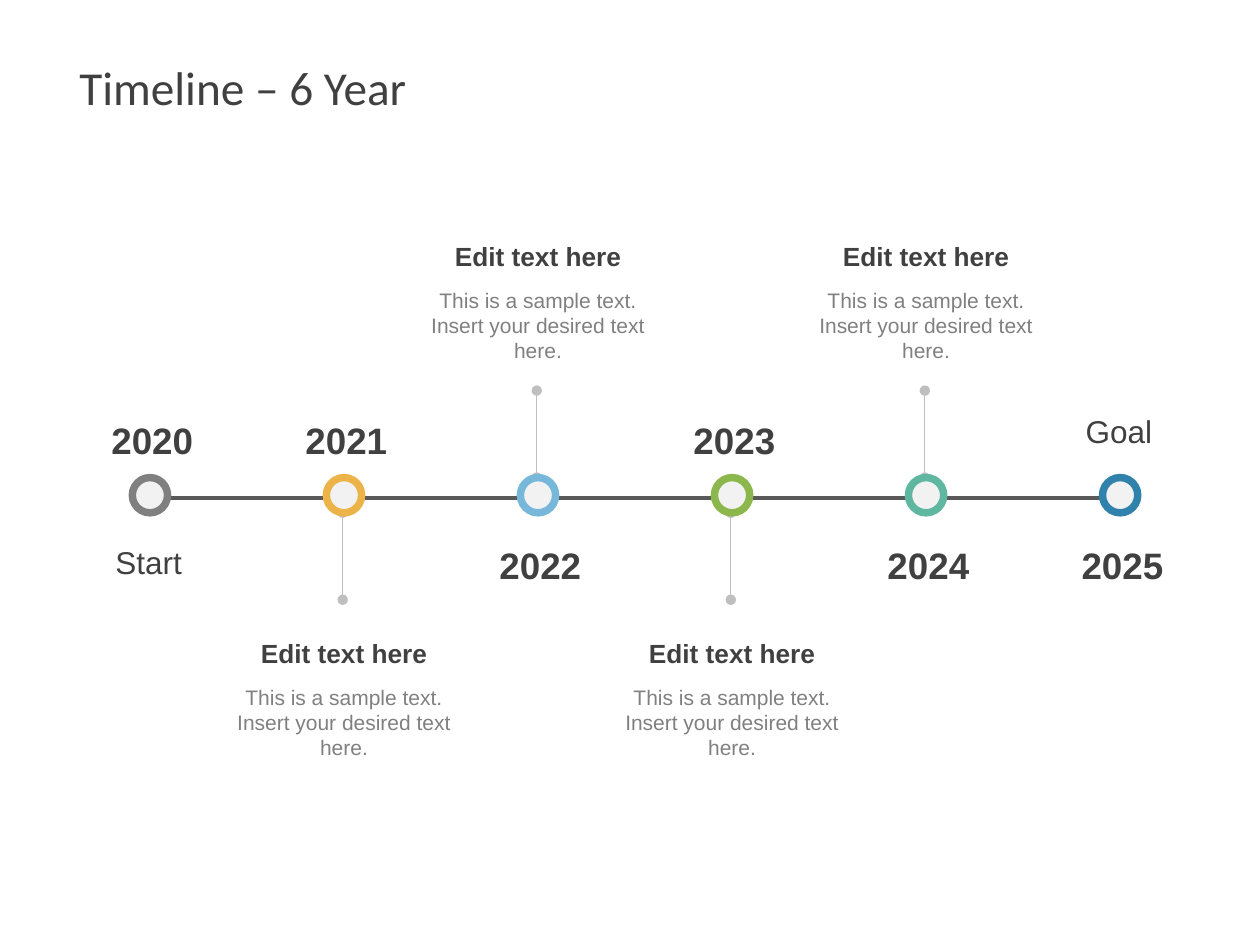
from dataclasses import dataclass

from lxml import etree
from pptx import Presentation
from pptx import util as u
from pptx.dml.color import RGBColor
from pptx.enum import shapes, text
from pptx.oxml.ns import qn

WIDTH, HEIGHT = 10, 7.5

INK = RGBColor(0x40, 0x40, 0x40)
GRAY = RGBColor(0x80, 0x80, 0x80)
AXIS_GRAY = RGBColor(0x59, 0x59, 0x59)
STEM_GRAY = RGBColor(0xBF, 0xBF, 0xBF)
NODE_FILL = RGBColor(0xF2, 0xF2, 0xF2)
AMBER = RGBColor(0xEC, 0xB4, 0x48)
SKY = RGBColor(0x77, 0xB7, 0xD9)
GREEN = RGBColor(0x8B, 0xB7, 0x4C)
TEAL = RGBColor(0x5F, 0xB7, 0xA2)
BLUE = RGBColor(0x30, 0x81, 0xAC)

# Horizontal grid: six equal columns, one per year
FIRST_X, COLUMN = 1.19, 1.54
NODE_Y, NODE_SIZE = 3.93, 0.28
AXIS_Y = 3.95
STEM_LENGTH = 0.69
YEAR_WIDTH, YEAR_SHIFT = 0.85, 0.02
CALLOUT_WIDTH, BODY_DROP = 2.08, 0.37

HEADING = "Edit text here"
BODY = "This is a sample text. Insert your desired text here."


@dataclass(frozen=True)
class Side:
    """Rows used on one side of the axis; direction is -1 above, 1 below."""
    direction: int
    year_top: float
    caption_top: float
    callout_top: float


ABOVE = Side(-1, year_top=3.27, caption_top=3.22, callout_top=1.86)
BELOW = Side(1, year_top=4.26, caption_top=4.26, callout_top=5.01)


@dataclass(frozen=True)
class Milestone:
    year: str
    color: RGBColor
    year_side: Side
    caption: str = ""

    @property
    def other_side(self) -> Side:
        return BELOW if self.year_side is ABOVE else ABOVE


MILESTONES = [
    Milestone("2020", GRAY, ABOVE, "Start"),
    Milestone("2021", AMBER, ABOVE),
    Milestone("2022", SKY, BELOW),
    Milestone("2023", GREEN, ABOVE),
    Milestone("2024", TEAL, BELOW),
    Milestone("2025", BLUE, BELOW, "Goal"),
]


def column_x(index: int) -> float:
    return FIRST_X + index * COLUMN


def add_text(parent, words: str, left: float, top: float, width: float,
             height: float, *, size: float, color: RGBColor = INK,
             bold: bool = False, font: str = "Arial", wrap: bool = True,
             align=text.PP_ALIGN.CENTER, anchor=text.MSO_ANCHOR.TOP,
             grow: bool = True, insets: tuple = (0.1, 0.05)) -> None:
    box = parent.shapes.add_textbox(
        *(u.Inches(n) for n in (left, top, width, height)))
    frame = box.text_frame
    frame.word_wrap = wrap
    frame.vertical_anchor = anchor
    frame.auto_size = (text.MSO_AUTO_SIZE.SHAPE_TO_FIT_TEXT if grow
                       else text.MSO_AUTO_SIZE.NONE)
    frame.margin_left = frame.margin_right = u.Inches(insets[0])
    frame.margin_top = frame.margin_bottom = u.Inches(insets[1])
    para = frame.paragraphs[0]
    para.alignment = align
    span = para.add_run()
    span.text = words
    span.font.name = font
    span.font.size = u.Pt(size)
    span.font.bold = bold
    span.font.color.rgb = color


def add_line(page, start: tuple, end: tuple, color: RGBColor, weight: float,
             dots: bool = False) -> None:
    """Draw a straight line, with a round dot at both ends if dots is set."""
    line = page.shapes.add_connector(
        shapes.MSO_CONNECTOR.STRAIGHT,
        *(u.Inches(n) for n in (*start, *end)))
    line.line.color.rgb = color
    line.line.width = u.Pt(weight)
    if dots:
        outline = line.line._get_or_add_ln()
        for tag in ("a:headEnd", "a:tailEnd"):
            etree.SubElement(outline, qn(tag), type="oval")
    etree.SubElement(line._element.spPr, qn("a:effectLst"))


def add_stem(page, x: float, side: Side) -> None:
    near = NODE_Y + side.direction * NODE_SIZE / 2
    far = near + side.direction * STEM_LENGTH
    add_line(page, (x, min(near, far)), (x, max(near, far)),
             STEM_GRAY, 0.75, dots=True)


def add_node(page, x: float, color: RGBColor) -> None:
    node = page.shapes.add_shape(
        shapes.MSO_SHAPE.OVAL, u.Inches(x - NODE_SIZE / 2),
        u.Inches(NODE_Y - NODE_SIZE / 2),
        u.Inches(NODE_SIZE), u.Inches(NODE_SIZE))
    node.shadow.inherit = False
    node.fill.solid()
    node.fill.fore_color.rgb = NODE_FILL
    node.line.color.rgb = color
    node.line.width = u.Pt(4.25)


def add_callout(page, x: float, top: float) -> None:
    group = page.shapes.add_group_shape()
    left = x - CALLOUT_WIDTH / 2
    add_text(group, BODY, left, top + BODY_DROP, CALLOUT_WIDTH, 0.71,
             size=12, color=GRAY)
    add_text(group, HEADING, left, top, CALLOUT_WIDTH, 0.35,
             size=15, bold=True)


def add_labels(page, x: float, milestone: Milestone) -> None:
    add_text(page, milestone.year, x + YEAR_SHIFT - YEAR_WIDTH / 2,
             milestone.year_side.year_top, YEAR_WIDTH, 0.45, size=21,
             bold=True, wrap=False, align=text.PP_ALIGN.LEFT)
    if milestone.caption:
        add_text(page, milestone.caption, x - 0.56,
                 milestone.other_side.caption_top, 1.1, 0.4, size=18)
    else:
        add_callout(page, x, milestone.other_side.callout_top)


def main() -> None:
    deck = Presentation()
    deck.slide_width, deck.slide_height = u.Inches(WIDTH), u.Inches(HEIGHT)
    page = deck.slides.add_slide(deck.slide_layouts[6])
    placed = [(column_x(i), item) for i, item in enumerate(MILESTONES)]

    for x, milestone in placed:
        if not milestone.caption:
            add_stem(page, x - 0.01, milestone.other_side)
    add_text(page, "Timeline – 6 Year", 0.05 * WIDTH, 0.04 * HEIGHT,
             0.9 * WIDTH, 0.78, size=27, font="Calibri", grow=False,
             align=text.PP_ALIGN.LEFT, anchor=text.MSO_ANCHOR.MIDDLE,
             insets=(0.13, 0.07))
    add_line(page, (placed[0][0], AXIS_Y), (placed[-1][0], AXIS_Y),
             AXIS_GRAY, 2.25)
    for x, milestone in placed:
        add_node(page, x, milestone.color)
    for x, milestone in placed:
        add_labels(page, x, milestone)
    deck.save("out.pptx")


if __name__ == "__main__":
    main()
